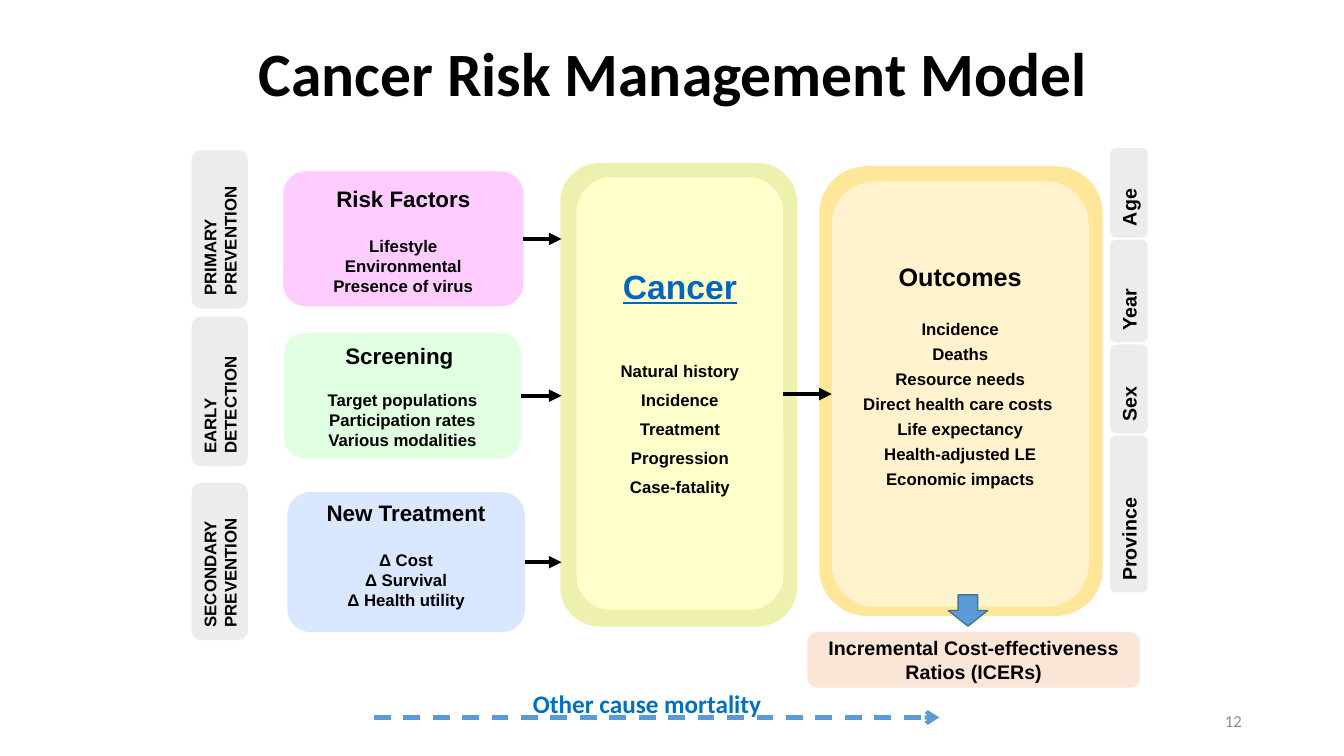
"""Build the Cancer Risk Management Model slide."""
from dataclasses import dataclass
from typing import Any, Optional

import lxml.etree
import pptx
import pptx.dml.color
import pptx.enum.dml
import pptx.enum.shapes
import pptx.enum.text
import pptx.oxml.ns
import pptx.util

Cm = pptx.util.Cm
Pt = pptx.util.Pt
Align = pptx.enum.text.PP_ALIGN
Anchor = pptx.enum.text.MSO_ANCHOR
Preset = pptx.enum.shapes.MSO_SHAPE
BLACK = "000000"
TAB_GREY = "ECECEC"


@dataclass(frozen=True)
class Box:
    left: float
    top: float
    width: float
    height: float

    @property
    def right(self) -> float:
        return self.left + self.width

    @property
    def middle(self) -> float:
        return self.top + self.height / 2


@dataclass(frozen=True)
class Card:
    box: Box
    fill: str
    heading: str
    items: tuple[str, ...]
    heading_size: float
    heading_gap: float
    item_gap: float
    top_inset: float
    heading_color: str = BLACK
    underline: bool = False


@dataclass(frozen=True)
class Stage:
    label: str
    label_length: float
    label_middle: float
    card: Card


@dataclass(frozen=True)
class Tab:
    label: str
    length: float


STAGES = (
    Stage("PRIMARY PREVENTION", 3.99, 5.78, Card(
        Box(7.14, 4.32, 6.05, 3.4), "FFCCFF", "Risk Factors",
        ("Lifestyle", "Environmental", "Presence of virus"), 16, 17, 0, 5)),
    Stage("EARLY DETECTION", 3.78, 9.86, Card(
        Box(7.16, 8.38, 5.97, 3.18), "E1FFE1", "Screening ",
        ("Target populations", "Participation rates", "Various modalities"), 16, 14.5, 0, 2.5)),
    Stage("SECONDARY PREVENTION", 3.96, 14.15, Card(
        Box(7.24, 12.4, 5.99, 3.53), "D9E7FF", "New Treatment",
        ("Δ Cost", "Δ Survival", "Δ Health utility"), 16, 17, 0, 0)),
)
CANCER = Card(
    Box(14.53, 4.47, 5.21, 10.9), "FFFFCC", "Cancer",
    ("Natural history", "Incidence", "Treatment", "Progression", "Case-fatality"),
    24, 39, 6.4, 63, "0563C1", True)
OUTCOMES = Card(
    Box(20.96, 4.57, 6.48, 10.72), "FFF2CC", "Outcomes",
    ("Incidence", "Deaths", "Resource needs", "Direct health care costs ",
     "Life expectancy", "Health-adjusted LE", "Economic impacts"), 18, 19.5, 3.4, 57)
TABS = (Tab("Age", 2.26), Tab("Year", 2.59), Tab("Sex", 2.24), Tab("Province", 3.96))


def rgb(color: str) -> pptx.dml.color.RGBColor:
    return pptx.dml.color.RGBColor.from_string(color)


def place(shape: Any, box: Box) -> None:
    shape.left, shape.top = Cm(box.left), Cm(box.top)
    shape.width, shape.height = Cm(box.width), Cm(box.height)


def add_block(slide: Any, box: Box, fill: str, preset: Any = Preset.ROUNDED_RECTANGLE) -> Any:
    shape = slide.shapes.add_shape(
        preset, Cm(box.left), Cm(box.top), Cm(box.width), Cm(box.height))
    shape.shadow.inherit = False
    shape.fill.solid()
    shape.fill.fore_color.rgb = rgb(fill)
    shape.line.fill.background()
    return shape


def add_run(paragraph: Any, text: str, size: float, color: str = BLACK,
            font: str = "Arial", bold: bool = True) -> Any:
    run = paragraph.add_run()
    run.text = text
    run.font.name, run.font.size, run.font.bold = font, Pt(size), bold
    run.font.color.rgb = rgb(color)
    return run


def prepare_frame(shape: Any, anchor: Any) -> Any:
    frame = shape.text_frame
    frame.word_wrap = True
    frame.auto_size = pptx.enum.text.MSO_AUTO_SIZE.NONE
    frame.vertical_anchor = anchor
    return frame


def write_line(shape: Any, text: str, size: float, align: Any, color: str = BLACK,
               font: str = "Arial", bold: bool = True) -> None:
    paragraph = prepare_frame(shape, Anchor.MIDDLE).paragraphs[0]
    paragraph.alignment = align
    add_run(paragraph, text, size, color, font, bold)


def add_card(slide: Any, card: Card, placeholder: Optional[Any] = None) -> None:
    holder = add_block(slide, card.box, card.fill)
    if placeholder is not None:
        holder = placeholder
        place(holder, card.box)
        slide.shapes._spTree.append(holder._element)
    frame = prepare_frame(holder, Anchor.TOP)
    frame.margin_left = frame.margin_right = Cm(0.15)
    frame.margin_top, frame.margin_bottom = Pt(card.top_inset), 0
    for index, text in enumerate((card.heading, *card.items)):
        heading = index == 0
        paragraph = frame.paragraphs[0] if heading else frame.add_paragraph()
        paragraph.alignment = Align.CENTER
        paragraph.space_before = Pt(0)
        paragraph.space_after = Pt(card.heading_gap if heading else card.item_gap)
        run = add_run(paragraph, text, card.heading_size if heading else 12,
                      card.heading_color if heading else BLACK)
        run.font.underline = heading and card.underline
        properties = paragraph._p.get_or_add_pPr()
        properties.set("marL", "0")
        properties.set("indent", "0")
        lxml.etree.SubElement(properties, pptx.oxml.ns.qn("a:buNone"))


def add_tab(slide: Any, label: str, center: float, middle: float,
            length: float, thickness: float, size: float) -> None:
    box = Box(center - length / 2, middle - thickness / 2, length, thickness)
    shape = add_block(slide, box, TAB_GREY)
    shape.rotation = 270
    write_line(shape, label, size, Align.LEFT)


def add_arrow(slide: Any, start: float, end: float, height: float,
              color: str = BLACK, head: str = "triangle", dashed: bool = False) -> None:
    connector = slide.shapes.add_connector(
        pptx.enum.shapes.MSO_CONNECTOR.STRAIGHT, Cm(start), Cm(height), Cm(end), Cm(height))
    connector.line.color.rgb = rgb(color)
    connector.line.width = Pt(3)
    if dashed:
        connector.line.dash_style = pptx.enum.dml.MSO_LINE.DASH
    line = connector.line._get_or_add_ln()
    lxml.etree.SubElement(line, pptx.oxml.ns.qn("a:tailEnd"), type=head)
    lxml.etree.SubElement(connector._element.spPr, pptx.oxml.ns.qn("a:effectLst"))


def add_label(slide: Any, box: Box, text: str, size: float, align: Any,
              color: str, bold: bool) -> None:
    shape = slide.shapes.add_textbox(
        Cm(box.left), Cm(box.top), Cm(box.width), Cm(box.height))
    write_line(shape, text, size, align, color, "Calibri", bold)


def main() -> None:
    presentation = pptx.Presentation()
    presentation.slide_width, presentation.slide_height = Cm(33.87), Cm(19.05)
    slide = presentation.slides.add_slide(presentation.slide_layouts[3])
    title, cancer_body, outcomes_body = list(slide.placeholders)[:3]
    place(title, Box(5.54, 0.66, 22.86, 2.31))
    write_line(title, "Cancer Risk Management Model", 44, Align.CENTER, font="Calibri")

    add_block(slide, Box(20.65, 4.19, 7.14, 11.33), "FFE699")
    add_block(slide, Box(14.12, 4.11, 5.97, 11.68), "EEF0AE")
    add_card(slide, CANCER, cancer_body)
    add_card(slide, OUTCOMES, outcomes_body)
    add_arrow(slide, CANCER.box.right, OUTCOMES.box.left, OUTCOMES.box.middle)

    for stage in STAGES:
        add_tab(slide, stage.label, 5.54, stage.label_middle, stage.label_length, 1.42, 12)
        add_card(slide, stage.card)
        add_arrow(slide, stage.card.box.right, 14.15, stage.card.box.middle)

    tab_top = 3.73
    for tab in TABS:
        add_tab(slide, tab.label, 28.45, tab_top + tab.length / 2, tab.length, 0.95, 14)
        tab_top += tab.length + 0.05

    ratios = add_block(slide, Box(20.35, 15.93, 8.38, 1.4), "FBE5D6")
    write_line(ratios, "Incremental Cost-effectiveness Ratios (ICERs)", 14, Align.CENTER)
    down_arrow = add_block(slide, Box(23.9, 14.99, 0.99, 0.79), "5B9BD5", Preset.DOWN_ARROW)
    down_arrow.line.color.rgb = rgb("43739E")
    down_arrow.line.width = Pt(1)

    add_arrow(slide, 9.42, 23.67, 18.08, "5B9BD5", "arrow", True)
    add_label(slide, Box(13.18, 17.22, 8.51, 1.02), "Other cause mortality", 18,
              Align.LEFT, "0070C0", True)
    add_label(slide, Box(23.93, 17.65, 7.62, 1.02), "12", 12, Align.RIGHT, "8C8C8C", False)
    presentation.save("out.pptx")


if __name__ == "__main__":
    main()
